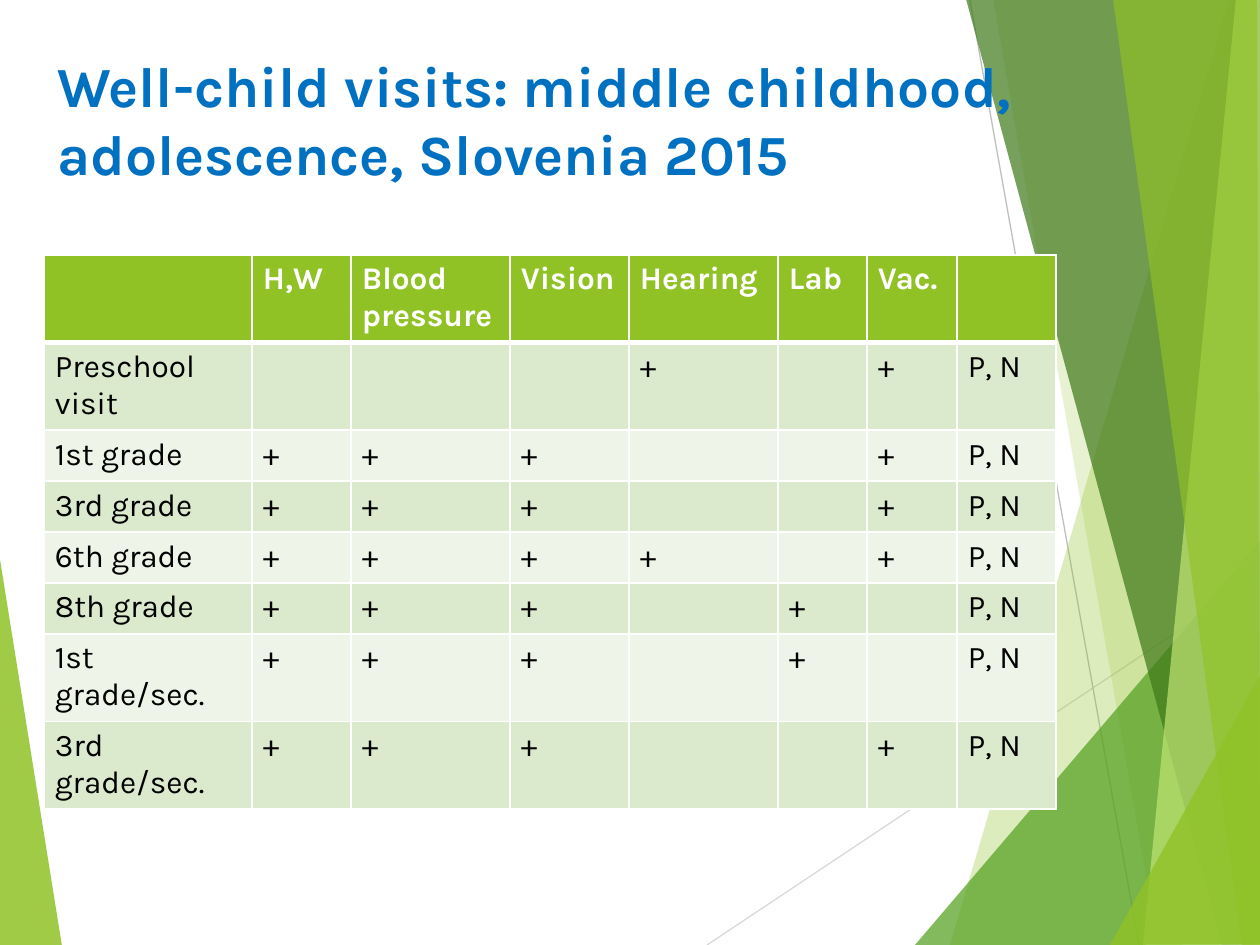
from dataclasses import dataclass

from lxml import etree
from pptx import Presentation
from pptx import util as u
from pptx.dml.color import RGBColor
from pptx.enum import shapes, text
from pptx.oxml import ns

SCALE = 914400 / 126  # EMU in one px


def px(n):
    return u.Emu(round(n * SCALE))


def sub(node, tag, **attrs):
    return etree.SubElement(node, ns.qn(tag), attrs)


@dataclass(frozen=True)
class Theme:
    font: str = "Karla"
    title: float = 32.4
    body: float = 18
    blue: str = "0070C0"
    white: str = "FFFFFF"
    black: str = "000000"
    lime: str = "90C226"
    leaf: str = "54A021"
    moss: str = "3F7819"
    pale: str = "C0E474"
    bands: tuple = ("DBE9CD", "EEF4E8")
    greys: tuple = ("D9D9D9", "BFBFBF")


class Deck:
    def __init__(self, theme):
        self.theme = theme
        self.prs = Presentation()
        self.prs.slide_width, self.prs.slide_height = px(1260), px(945)
        self.slide = self.prs.slides.add_slide(self.prs.slide_layouts[6])

    def shard(self, points, color, alpha):
        pen = self.slide.shapes.build_freeform(*points[0], scale=SCALE)
        pen.add_line_segments(points[1:], close=True)
        shape = pen.convert_to_shape()
        shape.shadow.inherit = False
        shape.line.fill.background()
        shape.fill.solid()
        shape.fill.fore_color.rgb = RGBColor.from_string(color)
        tint = next(shape.element.spPr.iter(ns.qn("a:srgbClr")))
        sub(tint, "a:alpha", val=str(alpha * 1000))

    def line(self, start, end, color):
        rule = self.slide.shapes.add_connector(
            shapes.MSO_CONNECTOR.STRAIGHT, *map(px, start + end))
        rule.line.color.rgb = RGBColor.from_string(color)
        rule.line.width = u.Pt(0.75)
        sub(rule.element.spPr, "a:effectLst")

    def run(self, frame, words, size, color, bold):
        run = frame.paragraphs[0].add_run()
        run.text = words
        font = run.font
        font.name, font.size, font.bold = self.theme.font, u.Pt(size), bold
        font.color.rgb = RGBColor.from_string(color)

    def title(self, box, words):
        frame = self.slide.shapes.add_textbox(*map(px, box)).text_frame
        frame.word_wrap = True
        frame.vertical_anchor = text.MSO_ANCHOR.TOP
        self.run(frame, words, self.theme.title, self.theme.blue, True)

    def edge(self, cell, widths):
        props = cell._tc.get_or_add_tcPr()
        for spot, (side, width) in enumerate(widths.items()):
            line = etree.Element(ns.qn("a:ln" + side), w=str(u.Pt(width)))
            fill = sub(line, "a:solidFill")
            sub(fill, "a:srgbClr", val=self.theme.white)
            props.insert(spot, line)

    def cell(self, cell, words, row):
        look, head = self.theme, row == 0
        cell.margin_left = cell.margin_right = px(11)
        cell.margin_top = cell.margin_bottom = px(6)
        cell.fill.solid()
        cell.fill.fore_color.rgb = RGBColor.from_string(
            look.lime if head else look.bands[(row - 1) % 2])
        self.edge(cell, {"L": 1, "R": 1, "T": 3 if row == 1 else 1,
                         "B": 3 if head else 1})
        if words:
            self.run(cell.text_frame, words, look.body,
                     look.white if head else look.black, head)

    def table(self, box, cols, high, rows):
        frame = self.slide.shapes.add_table(
            len(rows), len(cols), *map(px, box))
        grid = frame.table
        for col, wide in zip(grid.columns, cols):
            col.width = px(wide)
        for r, row in enumerate(rows):
            grid.rows[r].height = px(high)
            for c, words in enumerate(row):
                self.cell(grid.cell(r, c), words, r)
        frame.height = px(box[3])

    def save(self):
        self.prs.save("out.pptx")


def main():
    look = Theme()
    deck = Deck(look)

    # Green shards and thin lines at the edges
    deck.shard([(-1, 553), (62, 946), (-1, 945)], look.lime, 85)
    deck.line((707, 945), (1261, 576), look.greys[0])
    deck.line((970, 0), (1139, 945), look.greys[1])
    right = [
        ([(1229, 0), (950, 945), (1262, 946), (1261, 1)], look.lime, 30),
        ([(993, -1), (1158, 945), (1261, 945), (1261, -1)], look.lime, 20),
        ([(915, 945), (1260, 541), (1261, 945)], look.leaf, 72),
        ([(966, -1), (1222, 945), (1261, 944), (1261, -1)], look.moss, 70),
        ([(1236, -1), (1143, 945), (1261, 945), (1260, -1)], look.pale, 70),
        ([(1113, -1), (1242, 945), (1260, 945), (1257, -1)], look.lime, 65),
        ([(1110, 945), (1261, 674), (1261, 944)], look.lime, 80),
    ]
    for points, color, alpha in right:
        deck.shard(points, color, alpha)

    # Title
    deck.title((45, 45, 992, 182),
               "Well-child visits: middle childhood, "
               "adolescence, Slovenia 2015")

    # Table of visits: checks done at each one, then the staff
    checks = ["H,W", "Blood pressure", "Vision", "Hearing", "Lab", "Vac."]
    basic = {"H,W", "Blood pressure", "Vision"}
    visits = {
        "Preschool visit": {"Hearing", "Vac."},
        "1st grade": basic | {"Vac."},
        "3rd grade": basic | {"Vac."},
        "6th grade": basic | {"Hearing", "Vac."},
        "8th grade": basic | {"Lab"},
        "1st grade/sec.": basic | {"Lab"},
        "3rd grade/sec.": basic | {"Vac."},
    }
    rows = [["", *checks, ""]]
    for visit, done in visits.items():
        marks = ["+" if check in done else "" for check in checks]
        rows.append([visit, *marks, "P, N"])
    deck.table((44, 255, 1012, 557),
               (208, 99, 159, 119, 149, 89, 90, 99), 51, rows)

    deck.save()


if __name__ == "__main__":
    main()
